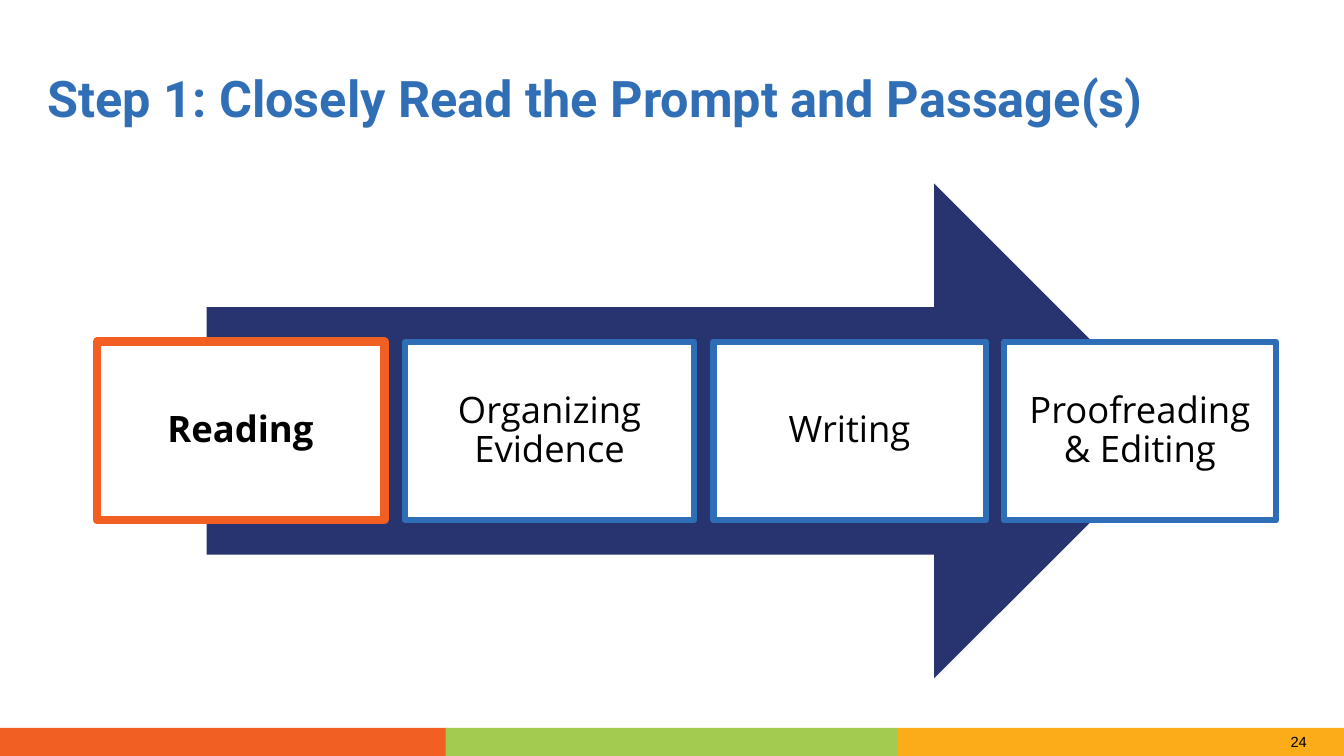
"""Build the reading-step slide of the four-step writing process."""
import dataclasses
import typing

import pptx
import pptx.dml.color
import pptx.enum.shapes
import pptx.enum.text
import pptx.util

COLOURS = {
    "orange": "F15F22",
    "green": "A2CB4F",
    "amber": "FBAC18",
    "navy": "27346F",
    "blue": "2E6EB7",
    "title": "306EB6",
    "white": "FFFFFF",
    "black": "000000",
}
WIDTH = pptx.util.Inches(13.33)
HEIGHT = pptx.util.Inches(7.5)
KINDS = pptx.enum.shapes.MSO_SHAPE
ALIGN = pptx.enum.text.PP_ALIGN
ANCHOR = pptx.enum.text.MSO_ANCHOR
SIDES = ("left", "top", "right", "bottom")


@dataclasses.dataclass(frozen=True)
class Area:
    """Position and size in percent of the slide."""

    left: float
    top: float
    width: float
    height: float

    def lengths(self) -> dict[str, int]:
        """Return the position and size as slide lengths."""
        return {
            "left": round(WIDTH * self.left / 100),
            "top": round(HEIGHT * self.top / 100),
            "width": round(WIDTH * self.width / 100),
            "height": round(HEIGHT * self.height / 100),
        }


@dataclasses.dataclass(frozen=True)
class Band:
    """One colour of the footer."""

    left: float
    width: float
    colour: str


@dataclasses.dataclass(frozen=True)
class Step:
    """One box of the process."""

    label: str
    left: float
    width: float
    border: str = "blue"
    weight: float = 4.5
    bold: bool = False


FOOTER_TOP, FOOTER_HEIGHT = 96.27, 3.73
STEP_TOP, STEP_HEIGHT = 45.2, 23.6
ARROW = Area(15.38, 24.27, 72.54, 65.47)
TITLE = Area(3.53, 10.27, 93.02, 6.27)
NUMBER = Area(95.2, FOOTER_TOP, 2.85, FOOTER_HEIGHT)
BANDS = (
    Band(66.69, 33.31, "amber"),
    Band(0, 33.31, "orange"),
    Band(33.16, 33.61, "green"),
)
STEPS = (
    Step("Reading", 7.2, 21.4, "orange", 6, True),
    Step("Organizing Evidence", 30.15, 21.5),
    Step("Writing", 53.1, 20.25),
    Step("Proofreading & Editing", 74.7, 20.25),
)


def colour(name: str) -> pptx.dml.color.RGBColor:
    """Look up a named colour."""
    return pptx.dml.color.RGBColor.from_string(COLOURS[name])


def apply(target: typing.Any, values: dict[str, typing.Any]) -> None:
    """Set every attribute in the format values."""
    for name, value in values.items():
        setattr(target, name, value)


def write(box: typing.Any, text: str, face: str, size: float, ink: str,
          bold: bool = False, align: typing.Any = ALIGN.LEFT,
          spacing: float = 1.0, inset: float = 0) -> None:
    """Fill a box with one formatted, vertically centred paragraph."""
    frame = box.text_frame
    margin = pptx.util.Inches(inset)
    apply(frame, {"word_wrap": True, "vertical_anchor": ANCHOR.MIDDLE,
                  **{f"margin_{side}": margin for side in SIDES}})
    para = frame.paragraphs[0]
    apply(para, {"alignment": align, "line_spacing": spacing})
    span = para.add_run()
    span.text = text
    apply(span.font, {"name": face, "size": pptx.util.Pt(size), "bold": bold})
    span.font.color.rgb = colour(ink)


def add_block(page: typing.Any, kind: typing.Any, area: Area, fill: str) -> typing.Any:
    """Add a flat preset shape without an outline."""
    block = page.shapes.add_shape(kind, **area.lengths())
    block.shadow.inherit = False
    block.fill.solid()
    block.fill.fore_color.rgb = colour(fill)
    block.line.fill.background()
    return block


def add_step(page: typing.Any, step: Step) -> None:
    """Add one bordered and labelled process box."""
    area = Area(step.left, STEP_TOP, step.width, STEP_HEIGHT)
    box = add_block(page, KINDS.RECTANGLE, area, "white")
    box.line.color.rgb = colour(step.border)
    box.line.width = pptx.util.Pt(step.weight)
    write(box, step.label, "Open Sans", 26, "black", step.bold,
          ALIGN.CENTER, 0.9, 0.11)


def main() -> None:
    """Create and save the deck."""
    deck = pptx.Presentation()
    apply(deck, {"slide_width": WIDTH, "slide_height": HEIGHT})
    page = deck.slides.add_slide(deck.slide_layouts[5])

    for band in BANDS:
        area = Area(band.left, FOOTER_TOP, band.width, FOOTER_HEIGHT)
        add_block(page, KINDS.RECTANGLE, area, band.colour)
    number = page.shapes.add_textbox(**NUMBER.lengths())
    write(number, "24", "Arial", 10.5, "black", align=ALIGN.CENTER)

    title = page.shapes.title
    apply(title, TITLE.lengths())
    write(title, "Step 1: Closely Read the Prompt and Passage(s)",
          "Roboto", 36, "title", bold=True, spacing=0.9)

    arrow = add_block(page, KINDS.RIGHT_ARROW, ARROW, "navy")
    for index in range(2):
        arrow.adjustments[index] = 0.5
    for step in STEPS:
        add_step(page, step)

    deck.save("out.pptx")


if __name__ == "__main__":
    main()
